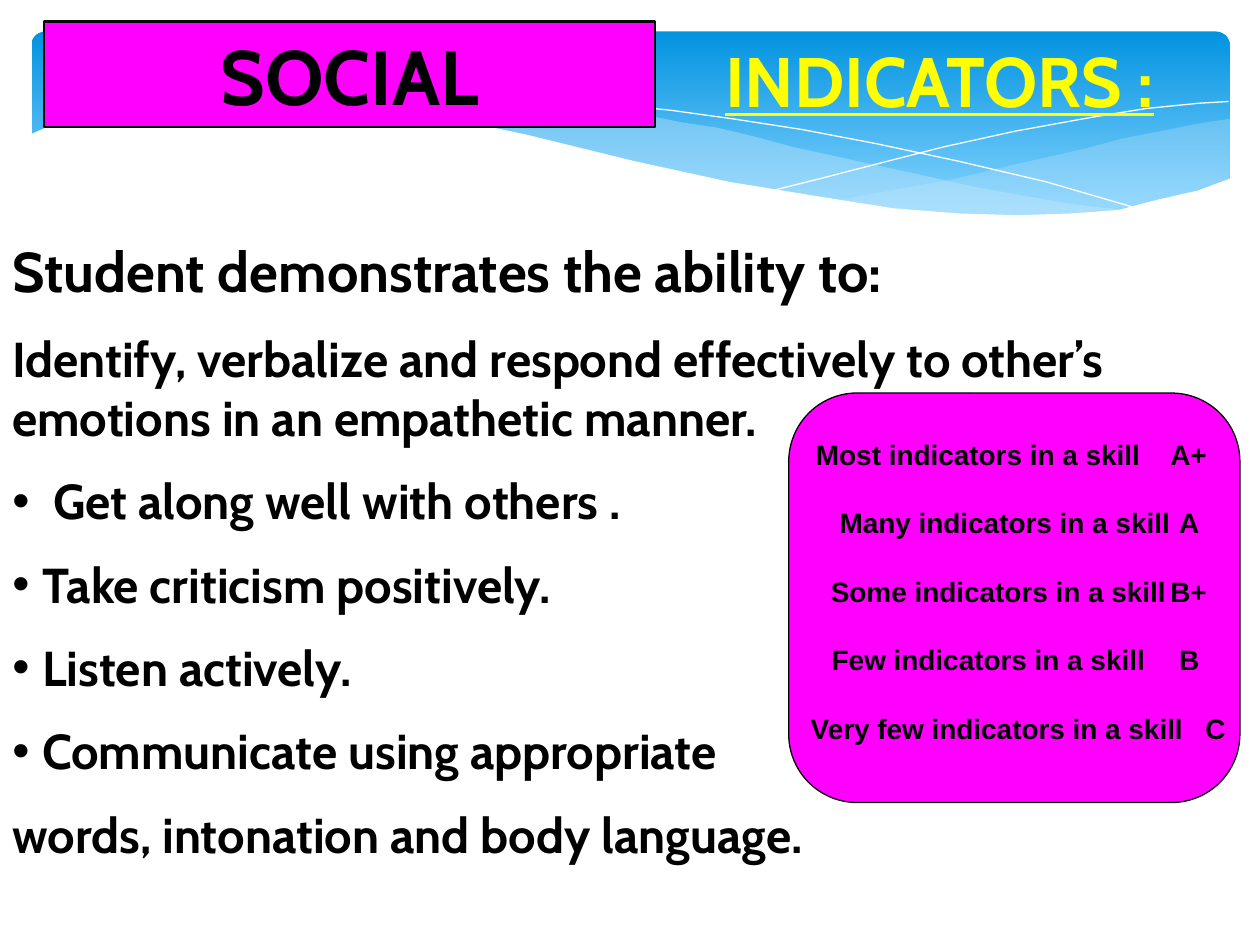
from lxml import etree
from pptx import Presentation
from pptx.dml.color import RGBColor
from pptx.enum.shapes import MSO_SHAPE
from pptx.enum.text import MSO_ANCHOR, PP_ALIGN
from pptx.oxml.ns import qn
from pptx.util import Pt

RECT, ROUNDED = MSO_SHAPE.RECTANGLE, MSO_SHAPE.ROUNDED_RECTANGLE
CENTER, LEFT = PP_ALIGN.CENTER, PP_ALIGN.LEFT
TOP, MIDDLE = MSO_ANCHOR.TOP, MSO_ANCHOR.MIDDLE

WHITE = RGBColor(0xFF, 0xFF, 0xFF)
BLACK = RGBColor(0x00, 0x00, 0x00)
NEAR_BLACK = RGBColor(0x08, 0x08, 0x08)
MAGENTA = RGBColor(0xFF, 0x00, 0xFF)
YELLOW = RGBColor(0xFF, 0xFF, 0x00)
BLUE = RGBColor(0x02, 0x93, 0xE0)
SKY = RGBColor(0x83, 0xD3, 0xFE)
PALE = RGBColor(0xC6, 0xE7, 0xFC)

HEAD_FONT, LEGEND_FONT = "Cabin", "Arial"

RIGHT_WAVE = [
    (702, 67.7), (682.6, 71.3), (663.1, 74.9), (641.5, 79.2), (619.9, 85),
    (579.6, 94.3), (542.2, 103), (508.3, 109.4), (475.9, 115.2), (497.5, 118.1),
    (517, 120.2), (545, 121.7), (570.2, 123.8), (593.3, 123.8), (614.9, 122.4),
    (634.3, 120.2), (651.6, 117.4), (668.2, 113.8), (683.3, 109.4),
    (702.7, 101.5), (702.7, 67.7)]
LEFT_WAVE = [
    (643, 120.2), (623.5, 118.1), (602.6, 115.2), (558, 107.3), (508.3, 96.5),
    (452.9, 83.5), (430.6, 78.5), (409.7, 73.4), (389.5, 69.8), (370.1, 66.2),
    (352.1, 64.1), (317.5, 59.8), (287.3, 57.6), (259.9, 57.6), (236.2, 58.3),
    (205.9, 61.9), (232.6, 64.8), (260.6, 69.8), (290.9, 76.3), (323.3, 83.5),
    (381.6, 97.2), (432.7, 108), (468, 113.8), (500.4, 118.8), (529.9, 121.7),
    (556.6, 123.8), (581, 124.6), (603.4, 123.8), (624.2, 122.4)]
FALLING_LINE = [
    (222.5, 64.8), (236.2, 61.9), (254.2, 60.5), (278.6, 59), (311.8, 59),
    (352.1, 60.5), (383, 63.4), (419, 67.7), (457.9, 74.2), (500.4, 82.1),
    (547.2, 92.2), (598.3, 104.4), (653, 119.5)]
RISING_LINE = [
    (441.4, 108.7), (469.4, 101.5), (500.4, 93.6), (538.6, 84.2), (580.3, 74.9),
    (623.5, 67), (655.2, 61.9), (684.7, 59), (702, 57.6)]
WHITE_WAVE = [
    (703.4, 101.5), (684, 108.7), (662.4, 114.5), (638.6, 119.5), (612, 122.4),
    (582.5, 123.1), (547.9, 122.4), (509.8, 118.8), (465.8, 112.3),
    (416.9, 103.7), (362.2, 92.2), (301, 77), (262.8, 69.1), (226.8, 63.4),
    (195.1, 59.8), (165.6, 56.9), (139, 56.2), (115.9, 56.9), (85.7, 59),
    (61.2, 62.6), (42.5, 67.7), (25.9, 73.4), (16.6, 77), (16.6, 161.3),
    (703.4, 161.3)]

BODY = [
    ("Student demonstrates the ability to:", 32, False),
    ("Identify, verbalize and respond effectively to other’s emotions "
     "in an empathetic manner.", 28, False),
    (" Get along well with others .", 28, True),
    ("Take criticism positively.", 28, True),
    ("Listen actively.", 28, True),
    ("Communicate using appropriate", 28, True),
    ("words, intonation and body language.", 28, False)]
GRADES = [
    ("Most indicators in a skill", "A+", 36.5, 239),
    ("Many indicators in a skill", "A", 50, 244),
    ("Some indicators in a skill", "B+", 45, 239),
    ("Few indicators in a skill", "B", 45.5, 244),
    ("Very few indicators in a skill", "C", 33.5, 259)]


def add_box(slide, kind, left, top, width, height):
    sp = slide.shapes.add_shape(kind, Pt(left), Pt(top), Pt(width), Pt(height))
    sp.shadow.inherit = False
    return sp


def add_panel(slide, kind, box, outline, weight):
    sp = add_box(slide, kind, *box)
    sp.fill.solid()
    sp.fill.fore_color.rgb = MAGENTA
    sp.line.color.rgb = outline
    sp.line.width = Pt(weight)
    return sp


def add_text_frame(slide, left, top, width, height):
    sp = slide.shapes.add_textbox(Pt(left), Pt(top), Pt(width), Pt(height))
    tf = sp.text_frame
    tf.word_wrap = True
    tf.vertical_anchor = TOP
    return tf


def add_run(p, text, size, font=HEAD_FONT, color=BLACK):
    r = p.add_run()
    r.text = text
    r.font.size = Pt(size)
    r.font.name = font
    r.font.bold = True
    r.font.color.rgb = color
    return r


def next_paragraph(tf, index):
    return tf.add_paragraph() if index else tf.paragraphs[0]


def add_outline(slide, left, top, points, fill=None, opacity=100):
    (x, y), *rest = [(left + px, top + py) for px, py in points]
    builder = slide.shapes.build_freeform(x, y, scale=12700)
    builder.add_line_segments(rest, close=fill is not None)
    sp = builder.convert_to_shape()
    sp.shadow.inherit = False
    if fill is None:
        sp.fill.background()
        sp.line.color.rgb = WHITE
        sp.line.width = Pt(0)
        return
    sp.fill.solid()
    sp.fill.fore_color.rgb = fill
    sp.line.fill.background()
    if opacity < 100:
        color = sp._element.spPr.find(qn("a:solidFill"))[0]
        etree.SubElement(color, qn("a:alpha"), val=str(opacity * 1000))


def add_banner(slide, left, top, width):
    sp = add_box(slide, ROUNDED, left + 18, top + 18, width - 35.3, 112.3)
    sp.adjustments[0] = 0.07
    sp.line.fill.background()
    sp.fill.gradient()
    sp.fill.gradient_angle = 270
    for stop, color, position in zip(sp.fill.gradient_stops, (BLUE, SKY), (0, 0.9)):
        stop.color.rgb = color
        stop.position = position
    add_outline(slide, left, top, RIGHT_WAVE, PALE, 29)
    add_outline(slide, left, top, LEFT_WAVE, PALE, 40)
    add_outline(slide, left, top, FALLING_LINE)
    add_outline(slide, left, top, RISING_LINE)
    add_outline(slide, left, top, WHITE_WAVE, WHITE)


def add_title(slide, left, top, width, height):
    sp = add_panel(slide, RECT, (left, top, width, height), NEAR_BLACK, 1.5)
    sp.text_frame.vertical_anchor = MIDDLE
    p = sp.text_frame.paragraphs[0]
    p.alignment = CENTER
    add_run(p, "SOCIAL", 44)
    tf = add_text_frame(slide, left + width + 0.6, top + 5.8, 324, 54)
    p = tf.paragraphs[0]
    p.alignment = CENTER
    add_run(p, "INDICATORS :", 40, color=YELLOW).font.underline = True


def add_body(slide, left, top, width, height):
    tf = add_text_frame(slide, left, top, width, height)
    for i, (text, size, bulleted) in enumerate(BODY):
        p = next_paragraph(tf, i)
        p.alignment = LEFT
        p.space_before = Pt(size / 2 if i else 0)
        add_run(p, text, size)
        if bulleted:
            pPr = p._p.get_or_add_pPr()
            pPr.set("marL", str(Pt(17)))
            pPr.set("indent", str(-Pt(17)))
            etree.SubElement(pPr, qn("a:buFont"), typeface="Arial")
            etree.SubElement(pPr, qn("a:buChar"), char="•")


def add_legend(slide, left, top, width, height):
    sp = add_panel(slide, ROUNDED, (left, top, width, height), BLACK, 0.75)
    sp.adjustments[0] = 0.167
    tf = add_text_frame(slide, left - 28, top + 21.6, width + 39.6, height)
    for i, (label, grade, label_at, grade_at) in enumerate(GRADES):
        p = next_paragraph(tf, i)
        p.alignment = LEFT
        p.space_after = Pt(20)
        tabs = etree.SubElement(p._p.get_or_add_pPr(), qn("a:tabLst"))
        for position in (label_at, grade_at):
            etree.SubElement(tabs, qn("a:tab"), pos=str(Pt(position)), algn="l")
        add_run(p, f"\t{label}\t{grade}", 16, LEGEND_FONT)


def main():
    prs = Presentation()
    prs.slide_width, prs.slide_height = Pt(720), Pt(540)
    slide = prs.slides.add_slide(prs.slide_layouts[6])
    add_banner(slide, 0, 0, 720)
    add_title(slide, 25.2, 12.2, 349.2, 60.5)
    add_body(slide, 0, 131.8, 702, 385.2)
    add_legend(slide, 450.7, 224.6, 257.8, 234)
    prs.save("out.pptx")


if __name__ == "__main__":
    main()
